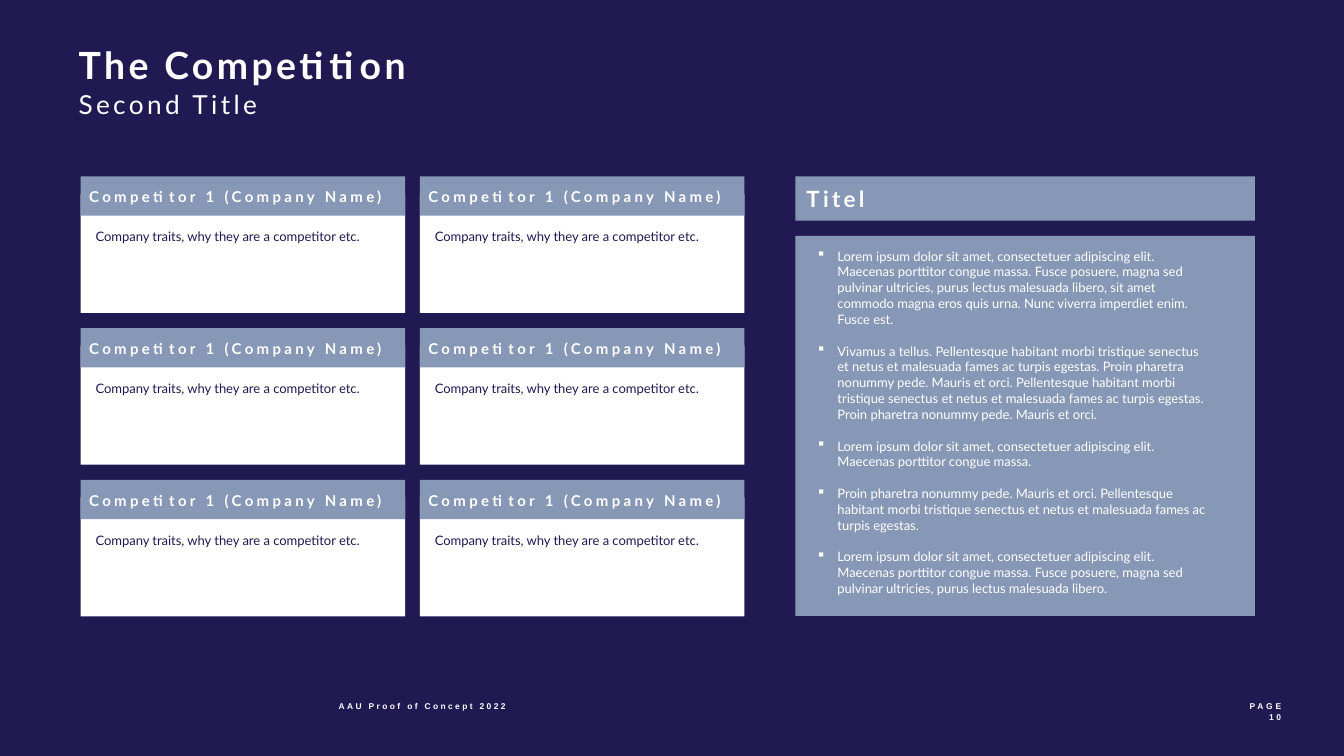
import lxml.etree
import pptx
import pptx.dml.color
import pptx.enum.shapes
import pptx.enum.text
import pptx.oxml.ns
import pptx.util

RGBColor = pptx.dml.color.RGBColor
NAVY = RGBColor(0x21, 0x1A, 0x52)
SLATE = RGBColor(0x87, 0x97, 0xB6)
WHITE = RGBColor(0xFF, 0xFF, 0xFF)

# The grid has ten columns and ten rows to the inch.
CELL = pptx.util.Inches(0.1)
COLS, ROWS = 133.33, 75
LEAD = 11.3
INSET = (1, 0.5, 1, 0.5)

POINTS = [
    "Lorem ipsum dolor sit amet, consectetuer adipiscing elit. Maecenas "
    "porttitor congue massa. Fusce posuere, magna sed pulvinar ultricies, "
    "purus lectus malesuada libero, sit amet commodo magna eros quis urna. "
    "Nunc viverra imperdiet enim. Fusce est.",
    "Vivamus a tellus. Pellentesque habitant morbi tristique senectus et "
    "netus et malesuada fames ac turpis egestas. Proin pharetra nonummy pede. "
    "Mauris et orci. Pellentesque habitant morbi tristique senectus et netus "
    "et malesuada fames ac turpis egestas. Proin pharetra nonummy pede. "
    "Mauris et orci.",
    "Lorem ipsum dolor sit amet, consectetuer adipiscing elit. Maecenas "
    "porttitor congue massa.",
    "Proin pharetra nonummy pede. Mauris et orci. Pellentesque habitant morbi "
    "tristique senectus et netus et malesuada fames ac turpis egestas.",
    "Lorem ipsum dolor sit amet, consectetuer adipiscing elit. Maecenas "
    "porttitor congue massa. Fusce posuere, magna sed pulvinar ultricies, "
    "purus lectus malesuada libero.",
]


def grid(*cells):
    """Turn counts of grid cells into lengths."""
    return [round(n * CELL) for n in cells]


def write(para, text, size=9.3, face="Lato", color=WHITE, bold=False,
          track=0, lead=None, align=None, gap=0, bullet=None):
    """Fill a paragraph; track, lead and gap are in points."""
    if bullet:
        props = para._p.get_or_add_pPr()
        indent, = grid(2.1)
        props.set("marL", str(indent))
        props.set("indent", str(-indent))
        mark = lxml.etree.SubElement(props, pptx.oxml.ns.qn("a:buChar"))
        mark.set("char", bullet)
    if lead:
        para.line_spacing = pptx.util.Pt(lead)
    if gap:
        para.space_before = pptx.util.Pt(gap)
    para.alignment = align
    run = para.add_run()
    run.text = text
    font = run.font
    font.name, font.size, font.bold = face, pptx.util.Pt(size), bold
    font.color.rgb = color
    if track:
        run._r.get_or_add_rPr().set("spc", str(round(track * 100)))


class Page:
    def __init__(self, deck):
        self.slide = deck.slides.add_slide(deck.slide_layouts[6])
        fill = self.slide.background.fill
        fill.solid()
        fill.fore_color.rgb = NAVY

    def block(self, x, y, w, h, color):
        kind = pptx.enum.shapes.MSO_SHAPE.RECTANGLE
        shape = self.slide.shapes.add_shape(kind, *grid(x, y, w, h))
        shape.shadow.inherit = False
        shape.fill.solid()
        shape.fill.fore_color.rgb = color
        shape.line.fill.background()

    def text(self, x, y, w, h, *lines, inset=(0, 0, 0, 0), grow=True, gap=0,
             **style):
        """Place lines as paragraphs, with gap points between them."""
        frame = self.slide.shapes.add_textbox(*grid(x, y, w, h)).text_frame
        frame.word_wrap = True
        (frame.margin_left, frame.margin_top,
         frame.margin_right, frame.margin_bottom) = grid(*inset)
        fit = pptx.enum.text.MSO_AUTO_SIZE
        frame.auto_size = fit.SHAPE_TO_FIT_TEXT if grow else fit.NONE
        for i, line in enumerate(lines):
            para = frame.add_paragraph() if i else frame.paragraphs[0]
            write(para, line, gap=gap if i else 0, **style)

    def card(self, x, y, name, trait):
        self.block(x, y + 1.75, 32.2, 11.8, WHITE)
        self.block(x, y, 32.2, 3.9, SLATE)
        self.text(x + 0.85, y + 1.15, 30.8, 1.8, name,
                  size=10.7, bold=True, track=2.4)
        self.text(x + 0.5, y + 4.7, 31.1, 2.6, trait,
                  inset=INSET, color=NAVY, lead=LEAD)

    def panel(self, x, y, title, points):
        self.block(x, y, 45.6, 4.4, SLATE)
        self.text(x + 1.1, y + 0.9, 40.9, 2.7, title,
                  size=16, bold=True, track=2.4)
        self.block(x, y + 5.9, 45.6, 37.7, SLATE)
        self.text(x + 1.1, y + 6.6, 40.9, 34.9, *points,
                  inset=INSET, lead=LEAD, gap=LEAD, bullet="▪")

    def foot(self, x, w, *lines, **style):
        self.text(x, 69.6, w, 3.1, *lines, grow=False,
                  size=6, face="Arial", bold=True, **style)


def main():
    deck = pptx.Presentation()
    deck.slide_width, deck.slide_height = grid(COLS, ROWS)
    page = Page(deck)
    page.text(7.8, 4.2, 54.4, 4.5, "The Competition",
              size=26.7, bold=True, track=2.4)
    page.text(7.8, 8.8, 28.9, 3.1, "Second Title", size=18.7, track=2.4)
    for col in range(2):
        for row in range(3):
            page.card(8 + 33.65 * col, 17.5 + 15.05 * row,
                      "Competitor 1 (Company Name)",
                      "Company traits, why they are a competitor etc.")
    page.panel(78.9, 17.5, "Titel", POINTS)
    page.foot(33.6, 19.9, "AAU Proof of Concept 2022", track=1.7)
    page.foot(111.6, 15.5, "PAGE", "10", track=2,
              align=pptx.enum.text.PP_ALIGN.RIGHT)
    deck.save("out.pptx")


if __name__ == "__main__":
    main()
